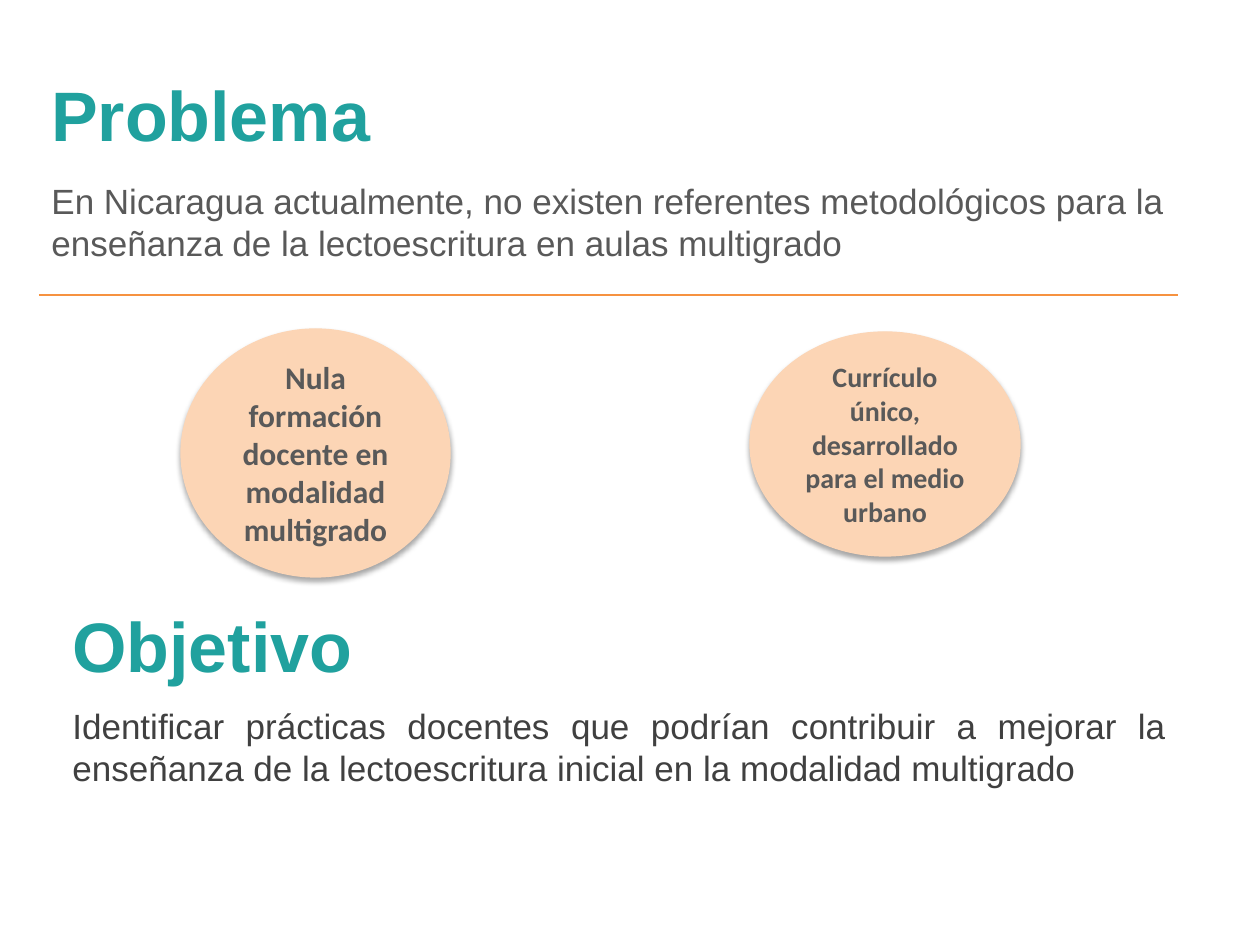
from lxml.etree import SubElement
from pptx import Presentation
from pptx.dml.color import RGBColor
from pptx.enum.shapes import MSO_CONNECTOR, MSO_SHAPE
from pptx.enum.text import MSO_ANCHOR, PP_ALIGN
from pptx.oxml.ns import qn
from pptx.util import Emu, Pt

TEAL, GRAY, DARK = "20A19E", "595959", "404040"
PEACH, ORANGE = "FCD5B5", "F69240"


def px(count):
    return Emu(round(count * 914400 / 126))


def color(code):
    return RGBColor.from_string(code)


class Board:
    """Holds the text style and the current slide."""

    def __init__(self, deck, font):
        self.slide = deck.slides.add_slide(deck.slide_layouts[6])
        self.font = font

    def label(self, shape, words, size, tint, bold, align, anchor, font):
        frame = shape.text_frame
        frame.word_wrap = True
        frame.vertical_anchor = anchor
        para = frame.paragraphs[0]
        para.alignment = align
        run = para.add_run()
        run.text = words
        run.font.name = font
        run.font.size = Pt(size)
        run.font.bold = bold
        run.font.color.rgb = color(tint)

    def text(self, box, words, size, tint, bold=False,
             align=PP_ALIGN.LEFT, anchor=MSO_ANCHOR.TOP):
        shape = self.slide.shapes.add_textbox(*map(px, box))
        self.label(shape, words, size, tint, bold, align, anchor, self.font)

    def head(self, box, words):
        self.text(box, words, 40, TEAL, True, anchor=MSO_ANCHOR.MIDDLE)

    def rule(self, left, right, top):
        line = self.slide.shapes.add_connector(
            MSO_CONNECTOR.STRAIGHT, px(left), px(top), px(right), px(top))
        line.line.color.rgb = color(ORANGE)
        line.line.width = Pt(0.75)
        SubElement(line._element.spPr, qn("a:effectLst"))

    def cause(self, box, words, size):
        oval = self.slide.shapes.add_shape(MSO_SHAPE.OVAL, *map(px, box))
        oval.fill.solid()
        oval.fill.fore_color.rgb = color(PEACH)
        oval.line.color.rgb = color(PEACH)
        oval.line.width = Pt(0.75)
        self.shade(oval)
        self.label(oval, words, size, GRAY, True, PP_ALIGN.CENTER,
                   MSO_ANCHOR.MIDDLE, "Calibri")

    def shade(self, shape):
        shape.shadow.inherit = False
        effects = shape._element.spPr.find(qn("a:effectLst"))
        shadow = SubElement(effects, qn("a:outerShdw"), blurRad=str(Pt(3.1)),
                            dist=str(Pt(1.8)), dir="5400000", rotWithShape="0")
        tint = SubElement(shadow, qn("a:srgbClr"), val="000000")
        SubElement(tint, qn("a:alpha"), val="35000")


def main():
    deck = Presentation()
    deck.slide_width, deck.slide_height = px(1260), px(945)
    board = Board(deck, "Arial")
    board.head((39, 60, 1070, 107), "Problema")
    board.text((39, 173, 1139, 159),
               "En Nicaragua actualmente, no existen referentes metodológicos "
               "para la enseñanza de la lectoescritura en aulas multigrado",
               20, GRAY)
    board.rule(39, 1178, 295)
    board.cause((181, 329, 269, 248),
                "Nula formación docente en modalidad multigrado", 18)
    board.cause((750, 332, 270, 224),
                "Currículo único, desarrollado para el medio urbano", 16)
    board.head((60, 596, 309, 97), "Objetivo")
    board.text((60, 698, 1119, 97),
               "Identificar prácticas docentes que podrían contribuir a mejorar "
               "la enseñanza de la lectoescritura inicial en la modalidad "
               "multigrado", 20, DARK, align=PP_ALIGN.JUSTIFY)
    deck.save("out.pptx")


if __name__ == "__main__":
    main()
